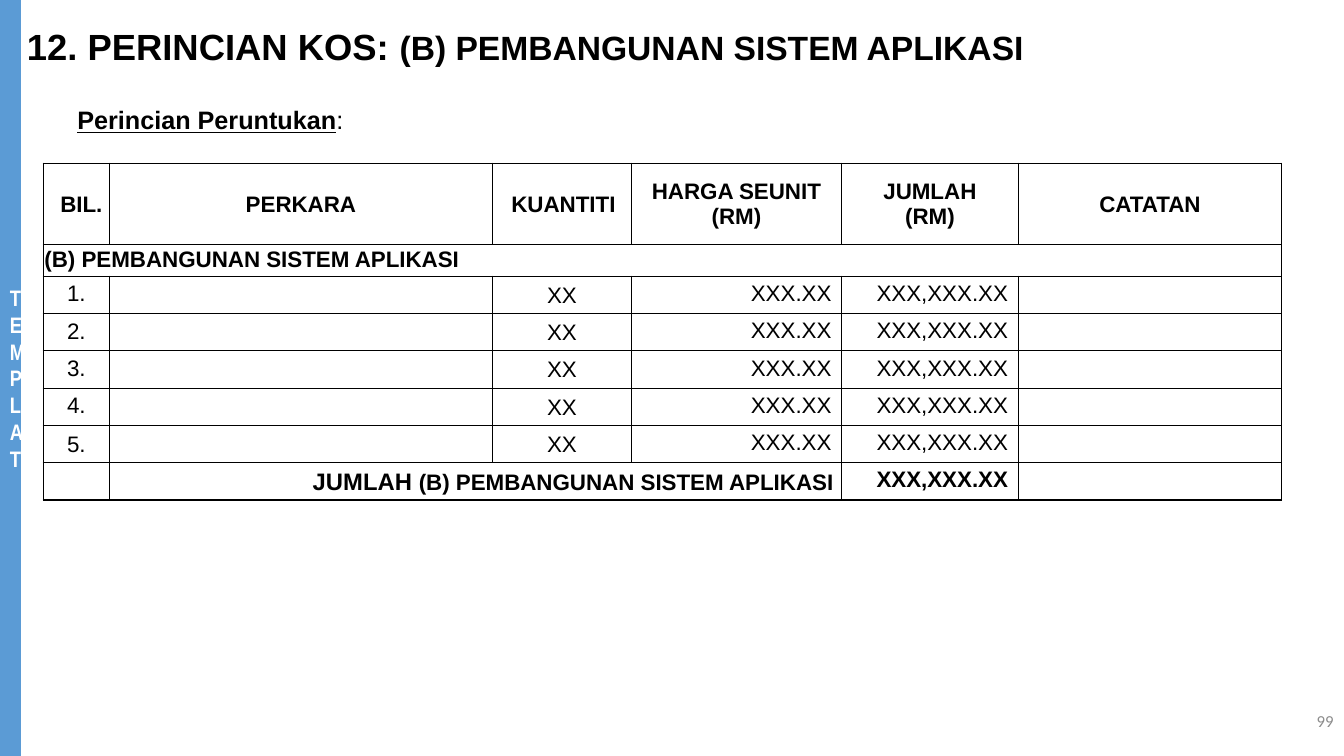
import pptx
import pptx.dml.color
import pptx.enum.shapes
import pptx.enum.text
import pptx.oxml
import pptx.oxml.ns
import pptx.util
from pptx.util import Cm

COLORS = {"bar": "5B9BD5", "text": "000000", "white": "FFFFFF", "number": "8C8C8C"}
ALIGN = pptx.enum.text.PP_ALIGN
ANCHOR = pptx.enum.text.MSO_ANCHOR


def format_run(run, size, bold=False, color="text", name="Arial"):
    run.font.size = pptx.util.Pt(size)
    run.font.bold = bold
    run.font.name = name
    run.font.color.rgb = pptx.dml.color.RGBColor.from_string(COLORS[color])


def add_text(slide, left, top, width, height, runs, align):
    """Add a one-paragraph box; runs are (text, size, bold) tuples."""
    shape = slide.shapes.add_textbox(Cm(left), Cm(top), Cm(width), Cm(height))
    shape.text_frame.word_wrap = True
    paragraph = shape.text_frame.paragraphs[0]
    paragraph.alignment = align
    for text, size, bold in runs:
        run = paragraph.add_run()
        run.text = text
        format_run(run, size, bold)
    return shape


presentation = pptx.Presentation()
presentation.slide_width = Cm(33.87)
presentation.slide_height = Cm(19.05)
slide = presentation.slides.add_slide(presentation.slide_layouts[6])

# Side bar: its narrow width stacks the letters
bar = slide.shapes.add_shape(
    pptx.enum.shapes.MSO_SHAPE.RECTANGLE, 0, 0, Cm(0.53), presentation.slide_height)
bar.shadow.inherit = False
bar.fill.solid()
bar.fill.fore_color.rgb = pptx.dml.color.RGBColor.from_string(COLORS["bar"])
bar.line.fill.background()
bar.text_frame.text = "TEMPLAT"
bar.text_frame.word_wrap = True
bar.text_frame.vertical_anchor = ANCHOR.MIDDLE
bar.text_frame.paragraphs[0].alignment = ALIGN.CENTER
format_run(bar.text_frame.paragraphs[0].runs[0], 16, True, "white", "Arial Narrow")

# Cost table
SECTION = "(B) PEMBANGUNAN SISTEM APLIKASI"
HEADERS = ["BIL.", "PERKARA", "KUANTITI", "HARGA SEUNIT\n(RM)", "JUMLAH\n(RM)", "CATATAN"]
COLUMN_WIDTHS = [1.67, 9.65, 3.5, 5.3, 4.45, 6.64]
ROW_HEIGHTS = [2.06, 0.79] + [0.94] * 6
rows = [HEADERS, [SECTION] + [""] * 5]
rows += [[f"{number}.", "", "XX", "XXX.XX", "XXX,XXX.XX", ""] for number in range(1, 6)]
rows += [["", f"JUMLAH {SECTION}", "", "", "XXX,XXX.XX", ""]]
TOTAL_ROW = len(rows) - 1

table = slide.shapes.add_table(
    len(rows), len(HEADERS), Cm(1.09), Cm(4.11),
    Cm(sum(COLUMN_WIDTHS)), Cm(sum(ROW_HEIGHTS))).table
table.first_row = False
table.horz_banding = False
for column, width in zip(table.columns, COLUMN_WIDTHS):
    column.width = Cm(width)
for row, height in zip(table.rows, ROW_HEIGHTS):
    row.height = Cm(height)
table.cell(1, 0).merge(table.cell(1, 5))
table.cell(TOTAL_ROW, 1).merge(table.cell(TOTAL_ROW, 3))

for row_index, texts in enumerate(rows):
    for column_index, text in enumerate(texts):
        cell = table.cell(row_index, column_index)
        cell.fill.background()
        properties = cell._tc.get_or_add_tcPr()
        for position, side in enumerate(["lnL", "lnR", "lnT", "lnB"]):
            properties.insert(position, pptx.oxml.parse_xml(
                f'<a:{side} {pptx.oxml.ns.nsdecls("a")} w="12700"><a:solidFill>'
                f'<a:srgbClr val="{COLORS["text"]}"/></a:solidFill></a:{side}>'))

        # Amounts sit at the top right with normal margins, the rest is tight
        amount = row_index > 1 and column_index in (3, 4)
        if not amount:
            cell.margin_left = cell.margin_right = cell.margin_top = Cm(0.03)
            cell.margin_bottom = 0
            cell.vertical_anchor = ANCHOR.MIDDLE
        if not text:
            continue

        cell.text_frame.text = text
        for paragraph in cell.text_frame.paragraphs:
            if row_index == 1:
                paragraph.alignment = ALIGN.LEFT
            elif amount or row_index == TOTAL_ROW:
                paragraph.alignment = ALIGN.RIGHT
            else:
                paragraph.alignment = ALIGN.CENTER
            if row_index == 1 or (column_index == 0 and 2 <= row_index <= 5):
                paragraph.line_spacing = pptx.util.Pt(15.7)
            format_run(paragraph.runs[0], 16, row_index in (0, 1, TOTAL_ROW))

# Header indents
for column_index, indent in [(0, 0.25), (2, 0.08)]:
    paragraph = table.cell(0, column_index).text_frame.paragraphs[0]
    paragraph._p.get_or_add_pPr().set("marL", str(Cm(indent)))

# Total label in two sizes
total = table.cell(TOTAL_ROW, 1)
total.margin_right = Cm(0.2)
paragraph = total.text_frame.paragraphs[0]
paragraph.runs[0].text = "JUMLAH "
format_run(paragraph.runs[0], 17, True)
run = paragraph.add_run()
run.text = SECTION
format_run(run, 16, True)

# Subtitle and title
subtitle = add_text(slide, 1.7, 2.41, 21.21, 1.02,
                    [("Perincian Peruntukan", 18, True), (": ", 18, False)], ALIGN.JUSTIFY)
subtitle.text_frame.margin_top = Cm(0.22)
subtitle.text_frame.paragraphs[0].runs[0].font.underline = True
title = add_text(slide, 0.43, 0.38, 33.63, 2.03,
                 [("12. PERINCIAN KOS: ", 26, True), (SECTION, 24, True)], ALIGN.LEFT)
title.text_frame.margin_top = Cm(0.23)

# Page number
page_number = add_text(slide, 26.24, 17.65, 7.62, 1.02, [("99", 12, False)], ALIGN.RIGHT)
page_number.text_frame.vertical_anchor = ANCHOR.MIDDLE
format_run(page_number.text_frame.paragraphs[0].runs[0], 12, False, "number", "Calibri")

presentation.save("out.pptx")
